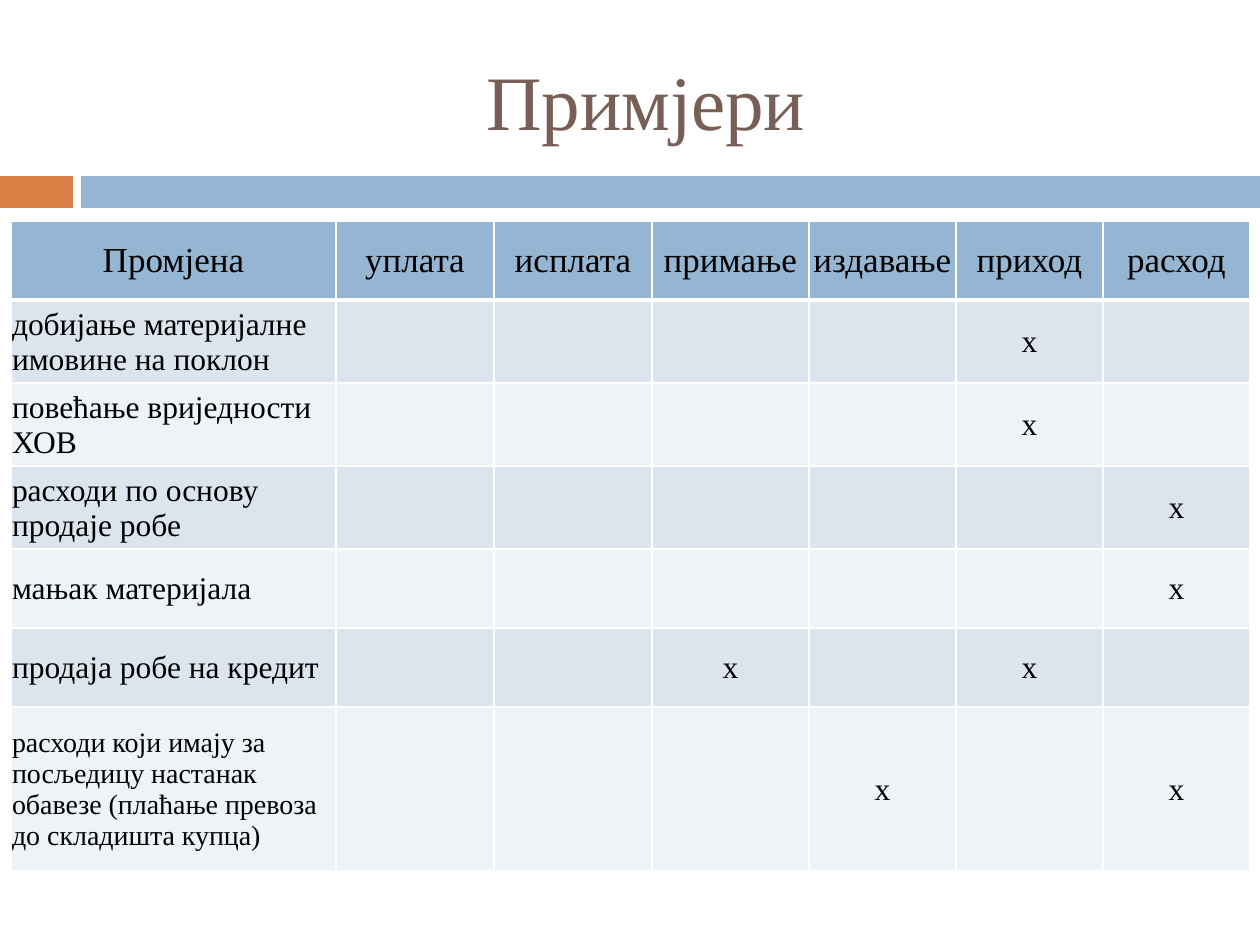
"""Build a slide with a table of business changes and the flows they affect."""
from dataclasses import dataclass

from lxml.etree import SubElement
from pptx import Presentation
from pptx.dml.color import RGBColor
from pptx.enum.shapes import MSO_SHAPE
from pptx.enum.text import MSO_ANCHOR, PP_ALIGN
from pptx.oxml.ns import qn
from pptx.util import Emu, Pt


@dataclass(frozen=True)
class Theme:
    font: str = "Times New Roman"
    title: str = "775F55"
    accent: str = "DD8047"
    header: str = "94B6D2"
    bands: tuple = ("DCE5EE", "EEF3F7")
    text: str = "000000"
    border: str = "FFFFFF"
    title_size: int = 44
    header_size: int = 20
    body_size: int = 18
    small_size: int = 16


THEME = Theme()
TITLE = "Примјери"
MARK = "х"
HEADERS = ["Промјена", "уплата", "исплата", "примање", "издавање", "приход", "расход"]
CHANGES = [
    ("добијање материјалне имовине на поклон", {"приход"}, THEME.body_size),
    ("повећање вриједности ХОВ", {"приход"}, THEME.body_size),
    ("расходи по основу продаје робе", {"расход"}, THEME.body_size),
    ("мањак материјала", {"расход"}, THEME.body_size),
    ("продаја робе на кредит", {"примање", "приход"}, THEME.body_size),
    ("расходи који имају за посљедицу настанак обавезе (плаћање превоза до складишта купца)",
     {"издавање", "расход"}, THEME.small_size),
]
COLUMN_WIDTHS = [325, 158, 158, 157, 147, 147, 147]
ROW_HEIGHTS = [79, 83, 83, 83, 79, 79, 164]
BARS = [((0, 176, 73, 32), THEME.accent), ((81, 176, 1179, 32), THEME.header)]


def px(length):
    return Emu(round(length * 914400 / 126))


def write(frame, text, size=THEME.body_size, color=THEME.text, align=PP_ALIGN.CENTER):
    para = frame.paragraphs[0]
    para.alignment = align
    span = para.add_run()
    span.text = text
    span.font.name = THEME.font
    span.font.size = Pt(size)
    span.font.color.rgb = RGBColor.from_string(color)


def add_bar(page, place, color):
    bar = page.shapes.add_shape(MSO_SHAPE.RECTANGLE, *map(px, place))
    bar.shadow.inherit = False
    bar.fill.solid()
    bar.fill.fore_color.rgb = RGBColor.from_string(color)
    bar.line.fill.background()


def add_title(page):
    box = page.shapes.add_textbox(*map(px, (84, 32, 1124, 136)))
    box.text_frame.word_wrap = True
    box.text_frame.vertical_anchor = MSO_ANCHOR.MIDDLE
    write(box.text_frame, TITLE, size=THEME.title_size, color=THEME.title)


def style_cell(cell, fill, top=1, bottom=1):
    cell.vertical_anchor = MSO_ANCHOR.MIDDLE
    cell.margin_left = cell.margin_right = cell.margin_top = px(1)
    cell.margin_bottom = 0
    properties = cell._tc.get_or_add_tcPr()
    for side, width in (("L", 1), ("R", 1), ("T", top), ("B", bottom)):
        line = SubElement(properties, qn(f"a:ln{side}"), w=str(Pt(width)))
        solid = SubElement(line, qn("a:solidFill"))
        SubElement(solid, qn("a:srgbClr"), val=THEME.border)
    cell.fill.solid()
    cell.fill.fore_color.rgb = RGBColor.from_string(fill)


def add_changes_table(page):
    place = (11, 221, sum(COLUMN_WIDTHS), sum(ROW_HEIGHTS))
    table = page.shapes.add_table(len(ROW_HEIGHTS), len(HEADERS), *map(px, place)).table
    for column, width in zip(table.columns, COLUMN_WIDTHS):
        column.width = px(width)
    for row, height in zip(table.rows, ROW_HEIGHTS):
        row.height = px(height)
    for index, header in enumerate(HEADERS):
        cell = table.cell(0, index)
        style_cell(cell, THEME.header, bottom=3)
        write(cell.text_frame, header, size=THEME.header_size)
    for number, (change, flows, size) in enumerate(CHANGES, start=1):
        for index, header in enumerate(HEADERS):
            cell = table.cell(number, index)
            style_cell(cell, THEME.bands[(number - 1) % 2], top=3 if number == 1 else 1)
            if index == 0:
                write(cell.text_frame, change, size=size, align=PP_ALIGN.LEFT)
            elif header in flows:
                write(cell.text_frame, MARK)


def main():
    deck = Presentation()
    deck.slide_width, deck.slide_height = px(1260), px(945)
    page = deck.slides.add_slide(deck.slide_layouts[6])
    for place, color in BARS:
        add_bar(page, place, color)
    add_title(page)
    add_changes_table(page)
    deck.save("out.pptx")


if __name__ == "__main__":
    main()
